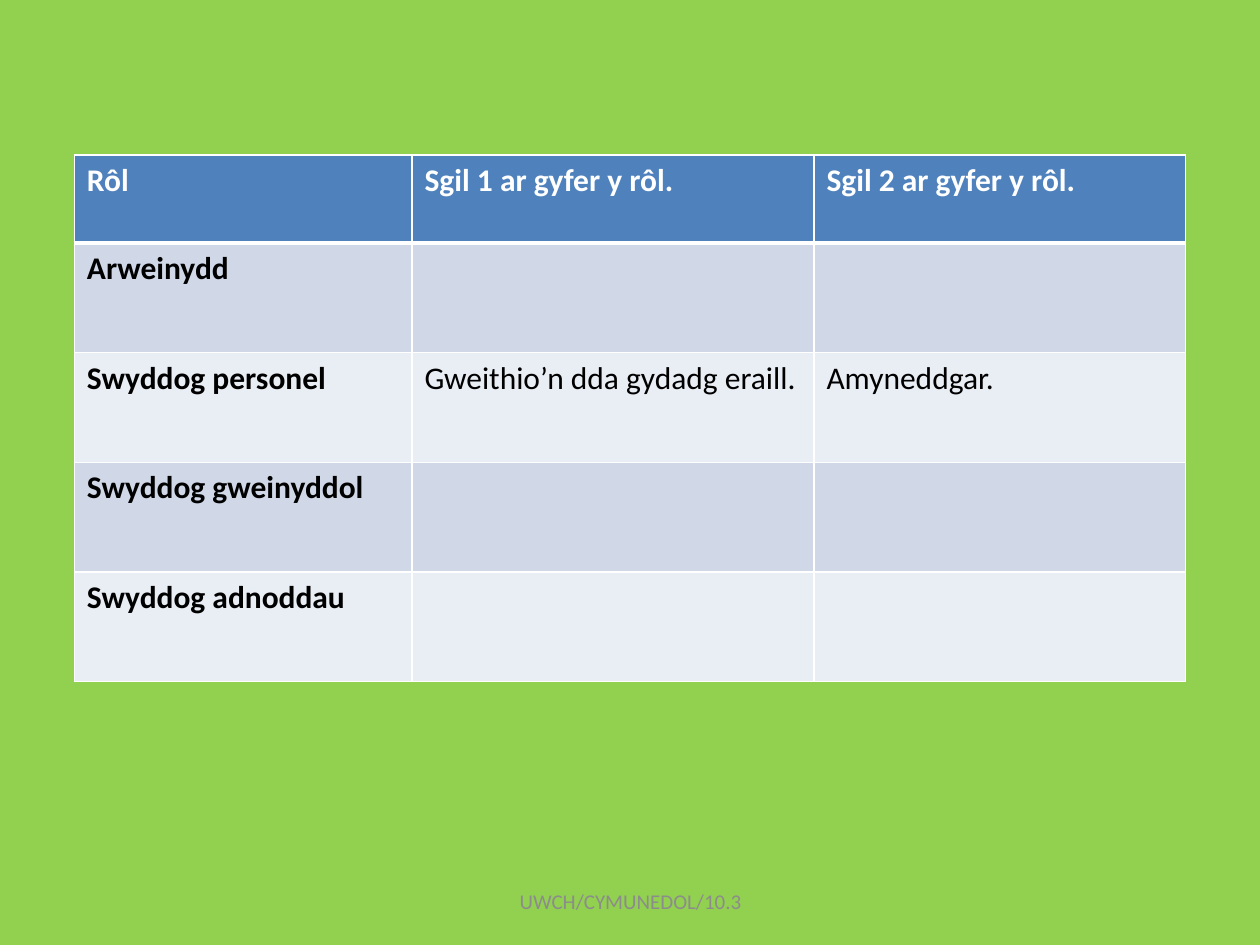
"""Build a slide with a table of team roles and the skills each one needs."""
from dataclasses import dataclass

from lxml import etree
from pptx import Presentation
from pptx.dml.color import RGBColor
from pptx.enum.text import MSO_ANCHOR, PP_ALIGN
from pptx.oxml.ns import qn
from pptx.slide import Slide
from pptx.table import _Cell
from pptx.util import Inches, Pt

MIDDLE = MSO_ANCHOR.MIDDLE
CENTER = PP_ALIGN.CENTER


@dataclass(frozen=True)
class Theme:
    font: str = "Calibri"
    background: str = "92D050"
    header: str = "4F81BD"
    bands: tuple[str, str] = ("D0D8E8", "E9EDF4")
    border: str = "FFFFFF"
    header_text: str = "FFFFFF"
    text: str = "000000"
    footer_text: str = "8C8C8C"
    table_size: int = 18
    footer_size: int = 12
    thin: int = 1
    thick: int = 3


@dataclass(frozen=True)
class Role:
    name: str
    skill_1: str = ""
    skill_2: str = ""


THEME = Theme()
HEADER = Role("Rôl", "Sgil 1 ar gyfer y rôl.", "Sgil 2 ar gyfer y rôl.")
ROLES = [
    Role("Arweinydd"),
    Role("Swyddog personel", "Gweithio’n dda gydadg eraill.", "Amyneddgar."),
    Role("Swyddog gweinyddol"),
    Role("Swyddog adnoddau"),
]
COLUMN_WIDTHS = (2.68, 3.19, 2.95)
HEADER_HEIGHT = 0.7
ROLE_HEIGHT = 0.87


def rgb(value: str) -> RGBColor:
    return RGBColor.from_string(value)


def set_border(cell: _Cell, side: str, points: int) -> None:
    tc_pr = cell._tc.get_or_add_tcPr()
    ln = etree.SubElement(tc_pr, qn(f"a:ln{side}"), w=str(Pt(points)))
    fill = etree.SubElement(ln, qn("a:solidFill"))
    etree.SubElement(fill, qn("a:srgbClr"), val=THEME.border)


def format_cell(cell: _Cell, text: str, row: int, col: int) -> None:
    is_header = row == 0
    thick_side = {0: "B", 1: "T"}.get(row)
    for side in "LRTB":
        set_border(cell, side, THEME.thick if side == thick_side else THEME.thin)
    cell.fill.solid()
    cell.fill.fore_color.rgb = rgb(THEME.header if is_header else THEME.bands[(row - 1) % 2])
    cell.text = text
    font = cell.text_frame.paragraphs[0].font
    font.name = THEME.font
    font.size = Pt(THEME.table_size)
    font.bold = is_header or col == 0
    font.color.rgb = rgb(THEME.header_text if is_header else THEME.text)


def add_role_table(slide: Slide, left: float, top: float) -> None:
    rows = [HEADER, *ROLES]
    heights = [HEADER_HEIGHT] + [ROLE_HEIGHT] * len(ROLES)
    table = slide.shapes.add_table(
        len(rows), len(COLUMN_WIDTHS), Inches(left), Inches(top),
        Inches(sum(COLUMN_WIDTHS)), Inches(sum(heights)),
    ).table
    for column, width in zip(table.columns, COLUMN_WIDTHS):
        column.width = Inches(width)
    for r, (role, height) in enumerate(zip(rows, heights)):
        table.rows[r].height = Inches(height)
        for c, text in enumerate((role.name, role.skill_1, role.skill_2)):
            format_cell(table.cell(r, c), text, r, c)


def add_footer(slide: Slide, text: str) -> None:
    sp = slide.shapes.add_textbox(Inches(3.42), Inches(6.95), Inches(3.17), Inches(0.4))
    tf = sp.text_frame
    tf.word_wrap = True
    tf.vertical_anchor = MIDDLE
    p = tf.paragraphs[0]
    p.text = text
    p.alignment = CENTER
    p.font.name = THEME.font
    p.font.size = Pt(THEME.footer_size)
    p.font.color.rgb = rgb(THEME.footer_text)


def main() -> None:
    prs = Presentation()
    prs.slide_width = Inches(10)
    prs.slide_height = Inches(7.5)
    slide = prs.slides.add_slide(prs.slide_layouts.get_by_name("Blank"))
    slide.background.fill.solid()
    slide.background.fill.fore_color.rgb = rgb(THEME.background)
    add_role_table(slide, 0.59, 1.23)
    add_footer(slide, "UWCH/CYMUNEDOL/10.3")
    prs.save("out.pptx")


if __name__ == "__main__":
    main()
